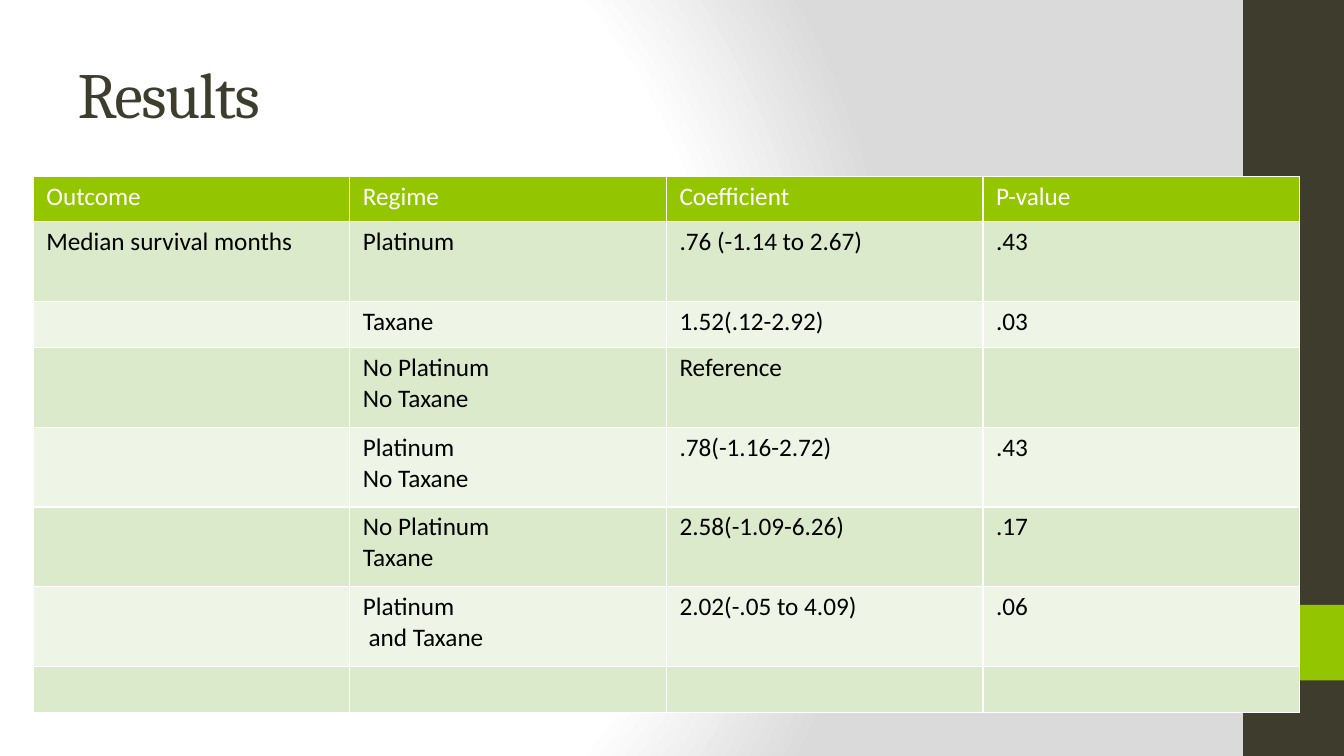
from pptx import Presentation
from pptx.dml.color import RGBColor as RGB
from pptx.enum.shapes import MSO_SHAPE as Shape
from pptx.enum.text import MSO_ANCHOR as Anchor, PP_ALIGN as Align
from pptx.oxml import parse_xml
from pptx.oxml.ns import nsdecls
from pptx.util import Inches, Pt

DARK = RGB(0x3E, 0x3D, 0x2D)
LIME = RGB(0x94, 0xC6, 0x00)
PALE = RGB(0xDC, 0xEA, 0xCC)
MIST = RGB(0xEE, 0xF5, 0xE7)
WHITE = RGB(0xFF, 0xFF, 0xFF)
BLACK = RGB(0, 0, 0)
GREY = RGB(0xDA, 0xDA, 0xDA)

ROWS = [
    ("Outcome", "Regime", "Coefficient", "P-value"),
    ("Median survival months", "Platinum", ".76 (-1.14 to 2.67)", ".43"),
    ("", "Taxane", "1.52(.12-2.92)", ".03"),
    ("", "No Platinum\nNo Taxane", "Reference", ""),
    ("", "Platinum\nNo Taxane", ".78(-1.16-2.72)", ".43"),
    ("", "No Platinum\nTaxane", "2.58(-1.09-6.26)", ".17"),
    ("", "Platinum\n and Taxane", "2.02(-.05 to 4.09)", ".06"),
    ("", "", "", ""),
]
HEIGHTS = [0.45, 0.79, 0.46, 0.79, 0.79, 0.79, 0.79, 0.46]


def apply(item, style):
    for name, value in style.items():
        setattr(item, name, value)


class Deck:
    head = {"name": "Cambria", "size": Pt(46), "bold": False}
    body = {"name": "Calibri", "size": Pt(18), "bold": False}
    inset = {"margin_left": Inches(0.13), "margin_right": Inches(0.13),
             "margin_top": Inches(0.05), "margin_bottom": Inches(0.05)}

    def __init__(self, show):
        self.slide = show.slides.add_slide(show.slide_layouts[5])

    def back(self, stops):
        marks = "".join(
            f'<a:gs pos="{at * 1000}"><a:srgbClr val="{tint}"/></a:gs>'
            for at, tint in stops)
        fill = parse_xml(
            f'<p:bg {nsdecls("p", "a")}><p:bgPr><a:gradFill rotWithShape="1">'
            f'<a:gsLst>{marks}</a:gsLst><a:path path="circle">'
            '<a:fillToRect l="20000" t="50000" r="100000" b="50000"/>'
            '</a:path></a:gradFill><a:effectLst/></p:bgPr></p:bg>')
        self.slide._element.cSld.insert(0, fill)

    def bar(self, top, height, tint):
        box = self.slide.shapes.add_shape(
            Shape.RECTANGLE, Inches(12.33), Inches(top), Inches(1), Inches(height))
        box.shadow.inherit = False
        box.fill.solid()
        box.fill.fore_color.rgb = tint
        box.line.fill.background()

    def title(self, text):
        box = self.slide.shapes.title
        apply(box, {"left": Inches(0.67), "top": Inches(0.3),
                    "width": Inches(11.11), "height": Inches(1.25)})
        frame = box.text_frame
        frame.text = text
        frame.vertical_anchor = Anchor.MIDDLE
        line = frame.paragraphs[0]
        line.alignment = Align.LEFT
        font = line.runs[0].font
        apply(font, self.head)
        font.color.rgb = DARK
        line.runs[0]._r.get_or_add_rPr().set("spc", "-100")

    def cell(self, cell, text, fill, ink):
        apply(cell, self.inset)
        cell.fill.solid()
        cell.fill.fore_color.rgb = fill
        cell.text = text
        for line in cell.text_frame.paragraphs:
            for part in [line, *line.runs]:
                apply(part.font, self.body)
                part.font.color.rgb = ink

    def table(self, rows, heights):
        grid = self.slide.shapes.add_table(
            len(rows), len(rows[0]), Inches(0.33), Inches(1.75),
            Inches(12.56), Inches(sum(heights))).table
        for col in grid.columns:
            col.width = Inches(3.14)
        for r, (row, height) in enumerate(zip(rows, heights)):
            grid.rows[r].height = Inches(height)
            fill = (PALE if r % 2 else MIST) if r else LIME
            for c, text in enumerate(row):
                self.cell(grid.cell(r, c), text, fill, BLACK if r else WHITE)


def main():
    show = Presentation()
    apply(show, {"slide_width": Inches(13.33), "slide_height": Inches(7.5)})
    deck = Deck(show)
    deck.back([(0, WHITE), (75, WHITE), (100, GREY)])
    deck.bar(0, 7.5, DARK)
    deck.bar(6, 0.75, LIME)
    deck.title("Results")
    deck.table(ROWS, HEIGHTS)
    show.save("out.pptx")


if __name__ == "__main__":
    main()
